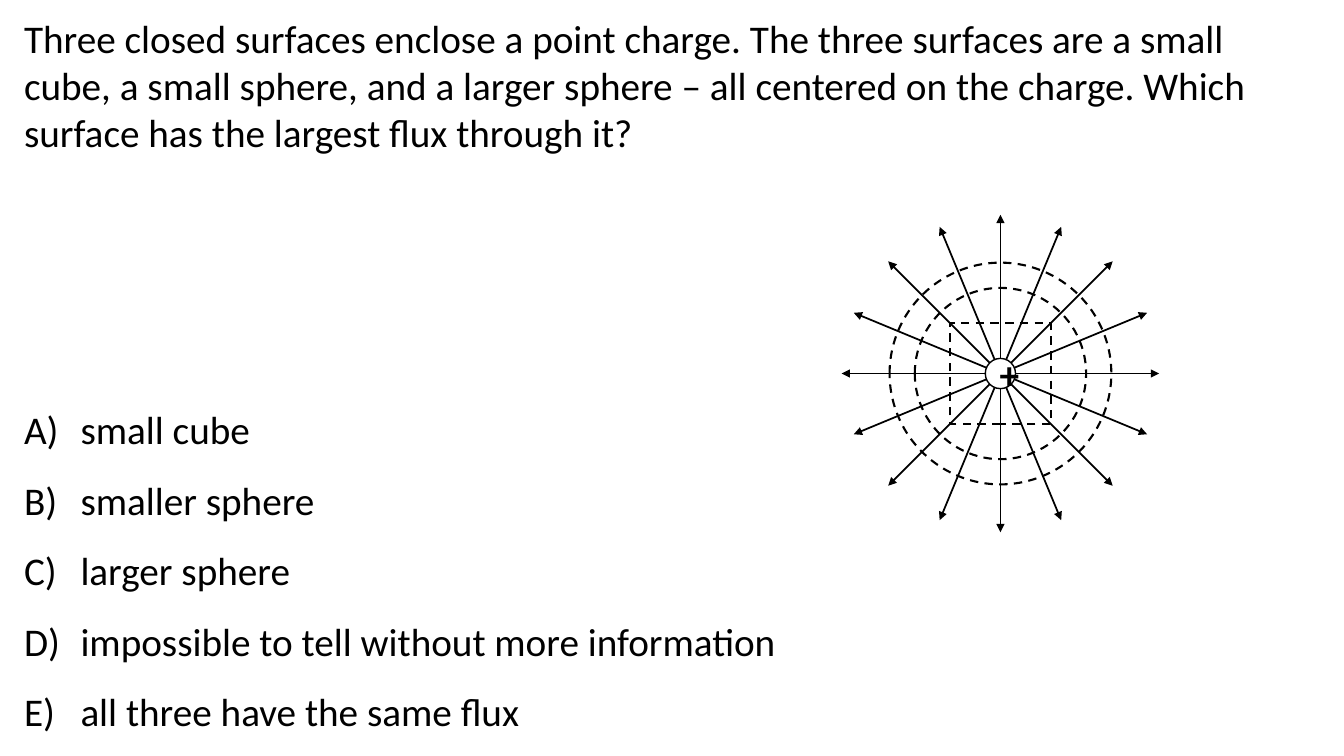
from math import cos, radians, sin

from lxml.etree import SubElement
from pptx import Presentation
from pptx.dml.color import RGBColor
from pptx.enum.dml import MSO_LINE_DASH_STYLE as Dash
from pptx.enum.shapes import MSO_CONNECTOR as Connector, MSO_SHAPE as Shape
from pptx.enum.text import MSO_ANCHOR as Anchor, MSO_AUTO_SIZE as AutoSize, PP_ALIGN as Align
from pptx.oxml.ns import qn
from pptx.util import Inches, Pt

COLORS = {"ink": "000000", "paper": "FFFFFF"}
FONT, SIZE = "Calibri", 28
COLUMNS = 80  # square cells, 80 across and 45 down

QUESTION = (
    "Three closed surfaces enclose a point charge. The three surfaces are a small cube, "
    "a small sphere, and a larger sphere – all centered on the charge. "
    "Which surface has the largest flux through it?"
)
ANSWERS = [
    "small cube",
    "smaller sphere",
    "larger sphere",
    "impossible to tell without more information",
    "all three have the same flux",
]

# Charge and field, in grid cells
CENTER = (59.55, 22.24)
SURFACES = [(Shape.OVAL, 6.6), (Shape.OVAL, 5.1), (Shape.RECTANGLE, 3)]
CHARGE_RADIUS = 0.9
RAY_TIP = 9.45
RAY_COUNT = 16


class Slide:
    def __init__(self, deck):
        self.page = deck.slides.add_slide(deck.slide_layouts[6])
        self.cell = deck.slide_width / COLUMNS

    def grid(self, *cells):
        return [round(value * self.cell) for value in cells]

    def color(self, name):
        return RGBColor.from_string(COLORS[name])

    def style_text(self, para, bold=False):
        for span in para.runs:
            span.font.name = FONT
            span.font.size = Pt(SIZE)
            span.font.bold = bold
            span.font.color.rgb = self.color("ink")

    def style_line(self, line, width):
        line.color.rgb = self.color("ink")
        line.width = Pt(width)

    def outline(self, kind, center, radius, width, dash=None):
        x, y = center
        shape = self.page.shapes.add_shape(
            kind, *self.grid(x - radius, y - radius, 2 * radius, 2 * radius))
        shape.shadow.inherit = False
        shape.fill.solid()
        shape.fill.fore_color.rgb = self.color("paper")
        self.style_line(shape.line, width)
        if dash:
            shape.line.dash_style = dash
        return shape

    def charge(self, center, radius, sign):
        frame = self.outline(Shape.OVAL, center, radius, 1).text_frame
        frame.text = sign
        frame.vertical_anchor = Anchor.MIDDLE
        para = frame.paragraphs[0]
        para.alignment = Align.CENTER
        self.style_text(para, bold=True)

    def ray(self, center, angle, inner, outer):
        across, down = cos(radians(angle)), sin(radians(angle))
        x, y = center
        ends = [x + inner * across, y + inner * down, x + outer * across, y + outer * down]
        arrow = self.page.shapes.add_connector(Connector.STRAIGHT, *self.grid(*ends))
        self.style_line(arrow.line, 1.25)
        SubElement(arrow.line._get_or_add_ln(), qn("a:tailEnd"), type="triangle")
        SubElement(arrow._element.spPr, qn("a:effectLst"))

    def text(self, place, lines, wrap=True):
        box = self.page.shapes.add_textbox(*self.grid(*place))
        frame = box.text_frame
        frame.text = "\n".join(lines)
        frame.word_wrap = wrap
        frame.auto_size = AutoSize.SHAPE_TO_FIT_TEXT
        for para in frame.paragraphs:
            self.style_text(para)
        return frame

    def lettered_list(self, place, lines):
        indent = Inches(0.56)
        for para in self.text(place, lines, wrap=False).paragraphs:
            para.line_spacing = 1.5
            properties = para._p.get_or_add_pPr()
            properties.set("marL", str(indent))
            properties.set("indent", str(-indent))
            SubElement(properties, qn("a:buFont"), typeface="+mj-lt")
            SubElement(properties, qn("a:buAutoNum"), type="alphaUcParenR")


def main():
    deck = Presentation()
    deck.slide_width, deck.slide_height = Inches(13.33), Inches(7.5)
    slide = Slide(deck)

    # Closed surfaces around the charge
    for kind, radius in SURFACES:
        slide.outline(kind, CENTER, radius, 1.5, Dash.DASH)
    slide.charge(CENTER, CHARGE_RADIUS, "+")

    # Field lines
    for index in range(RAY_COUNT):
        slide.ray(CENTER, index * 360 / RAY_COUNT, CHARGE_RADIUS, RAY_TIP)

    # Question and answers
    slide.text((0.84, 0.54, 77.46, 9.06), [QUESTION])
    slide.lettered_list((0.84, 22.44, 46.44, 21.84), ANSWERS)

    deck.save("out.pptx")


if __name__ == "__main__":
    main()
